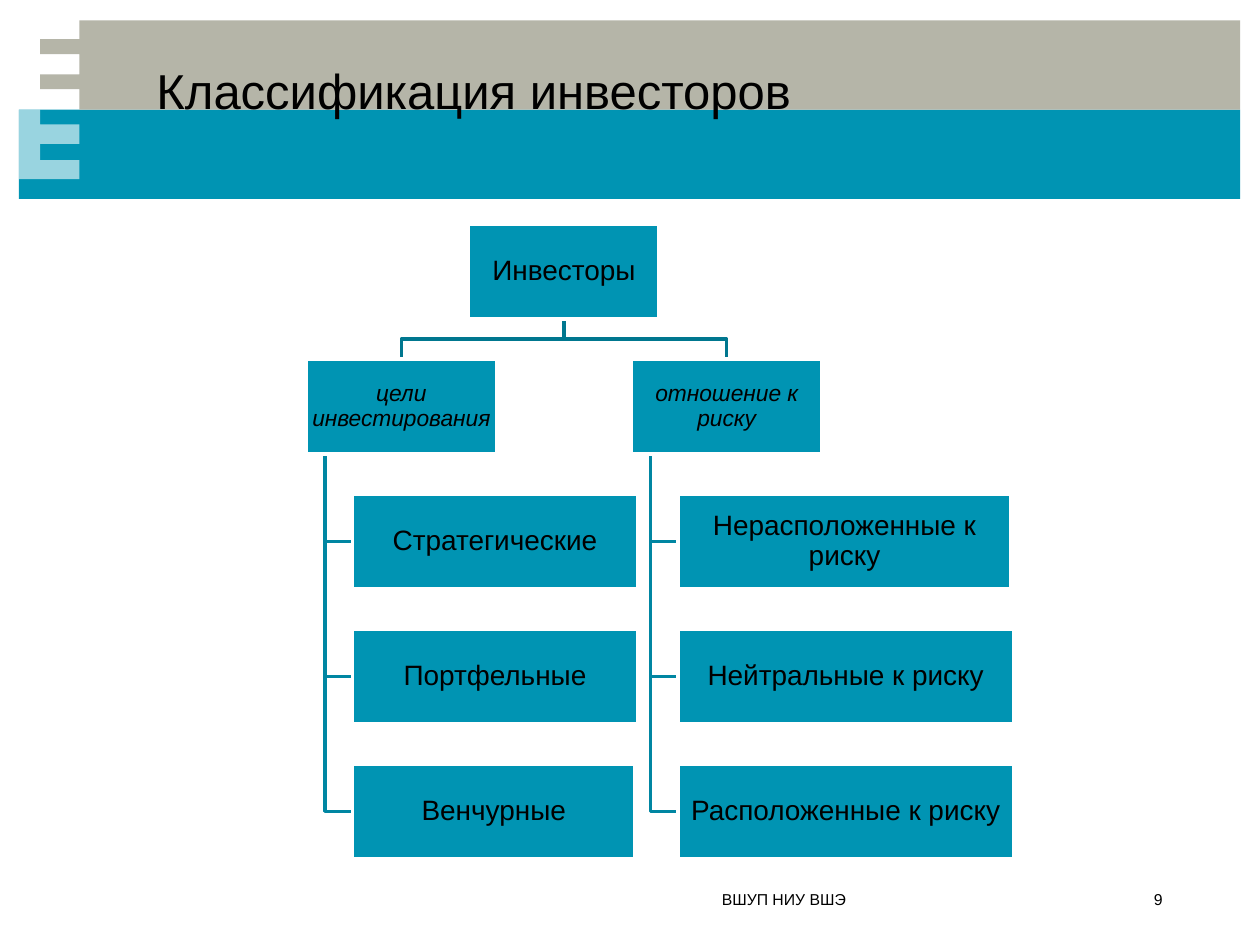
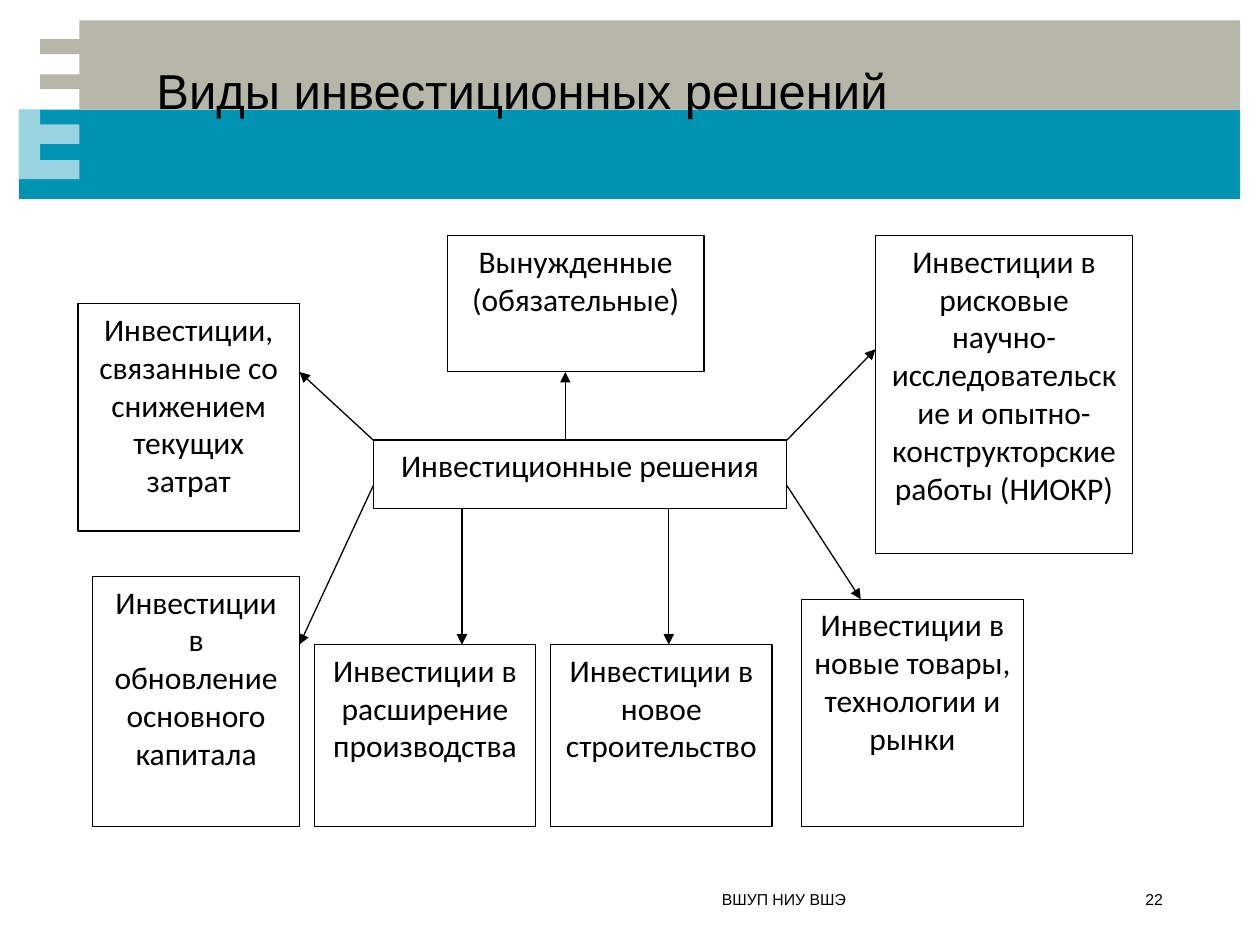
from dataclasses import dataclass
from itertools import pairwise

from lxml import etree
from pptx import Presentation
from pptx.dml.color import RGBColor
from pptx.enum.shapes import MSO_CONNECTOR as Connector, MSO_SHAPE as Preset
from pptx.enum.text import MSO_ANCHOR as Anchor, MSO_AUTO_SIZE as AutoSize, PP_ALIGN as Align
from pptx.oxml.ns import qn
from pptx.util import Cm, Pt


@dataclass(frozen=True)
class Theme:
    teal: str = "0094B3"
    stone: str = "B5B5A8"
    white: str = "FFFFFF"
    ink: str = "000000"
    root_line: str = "00778F"
    branch_line: str = "0086A2"
    font: str = "Arial"
    decision_font: str = "Calibri"
    title_size: float = 28
    decision_size: float = 18
    node_size: float = 16
    criterion_size: float = 13
    footer_size: float = 9
    thick: float = 2
    thin: float = 0.75


THEME = Theme()

# Content
FOOTER = "ВШУП НИУ ВШЭ"

INVESTORS = {
    "title": "Классификация инвесторов",
    "page": "9",
    "root": "Инвесторы",
    # criterion, left edge, [(class, width)], in cm
    "branches": [
        ("цели инвестирования", 6.17,
         [("Стратегические", 5.74), ("Портфельные", 5.74), ("Венчурные", 5.69)]),
        ("отношение к риску", 12.73,
         [("Нерасположенные к риску", 6.71), ("Нейтральные к риску", 6.76),
          ("Расположенные к риску", 6.76)]),
    ],
}

DECISIONS = {
    "title": "Виды инвестиционных решений",
    "page": "22",
    # text, (column, row, columns, rows) on the diagram grid
    "boxes": [
        ("Инвестиционные решения", (20, 9, 28, 3)),
        ("Вынужденные (обязательные)", (25, 0, 17.4, 6)),
        ("Инвестиции, связанные со снижением текущих затрат", (0, 3, 15, 10)),
        ("Инвестиции в обновление основного капитала", (1, 15, 14, 11)),
        ("Инвестиции в расширение производства", (16, 18, 15, 8)),
        ("Инвестиции в новое строительство", (32, 18, 15, 8)),
        ("Инвестиции в новые товары, технологии и рынки", (49, 16, 15, 10)),
        ("Инвестиции в рисковые научно-исследовательские и "
         "опытно-конструкторские работы (НИОКР)", (54, 0, 17.4, 14)),
    ],
    # (column, row) of the start and of the arrowhead
    "arrows": [
        ((33, 9), (33, 6)), ((20, 9), (15, 6)), ((20, 11), (15, 18)),
        ((26, 12), (26, 18)), ((40, 12), (40, 18)),
        ((48, 11), (53, 16)), ((48, 9), (54, 5)),
    ],
}

# Shared frame, in cm
BAND_LEFT, BAND_RIGHT = 0.38, 25
BAND_TOP, BAND_MIDDLE, BAND_BOTTOM = 0.41, 2.21, 4.01
COMB_TIP, COMB_SPINE = 0.81, 1.6
STONE_TEETH = [BAND_MIDDLE, 1.8, 1.5, 1.09, 0.79, BAND_TOP]
PALE_TEETH = [3.61, 3.23, 2.9, 2.51, BAND_MIDDLE]
TITLE_AREA = (2.9, 1.09, 20.8, 2.67)
FOOTER_AREA = (2.9, 17.93, 14.4, 0.38)
PAGE_AREA = (22.5, 17.93, 1.19, 0.38)

# Investor tree, in cm
TREE_TOP, LEVEL_STEP = 4.52, 2.72
NODE_WIDTH, NODE_HEIGHT = 3.84, 1.91
TRUNK_INDENT, CLASS_INDENT = 0.38, 0.94

# Decision grid, in cm
GRID_LEFT, GRID_TOP = 1.57, 4.75
COLUMN, ROW = 16.08 / 54, 11.91 / 26


def color(code):
    return RGBColor.from_string(code)


def cm(values):
    return [Cm(value) for value in values]


def write(frame, text, size, font=THEME.font, align=Align.CENTER, italic=False):
    frame.word_wrap = True
    paragraph = frame.paragraphs[0]
    paragraph.alignment = align
    run = paragraph.add_run()
    run.text = text
    run.font.name, run.font.size, run.font.italic = font, Pt(size), italic
    run.font.color.rgb = color(THEME.ink)
    return paragraph


def paint(shape, fill=None, line=None, width=THEME.thick):
    shape.shadow.inherit = False
    if fill:
        shape.fill.solid()
        shape.fill.fore_color.rgb = color(fill)
    else:
        shape.fill.background()
    if line:
        shape.line.color.rgb = color(line)
        shape.line.width = Pt(width)
    else:
        shape.line.fill.background()
    return shape


def rectangle(slide, area, **style):
    return paint(slide.shapes.add_shape(Preset.RECTANGLE, *cm(area)), **style)


def outline(slide, points, close, **style):
    start, *rest = [cm(point) for point in points]
    builder = slide.shapes.build_freeform(*start)
    builder.add_line_segments(rest, close=close)
    return paint(builder.convert_to_shape(), **style)


def comb(edges):
    """Zigzag upwards between the spine and the tips of the teeth."""
    return [(COMB_TIP if step % 2 else COMB_SPINE, y)
            for step, span in enumerate(pairwise(edges)) for y in span]


def add_bands(layout, slide):
    """Draw the header bands and hand them over to the shared layout."""
    teal = rectangle(slide, (BAND_LEFT, BAND_MIDDLE, BAND_RIGHT - BAND_LEFT,
                             BAND_BOTTOM - BAND_MIDDLE), fill=THEME.teal)
    stone = outline(slide, comb(STONE_TEETH) + [(BAND_RIGHT, BAND_TOP), (BAND_RIGHT, BAND_MIDDLE)],
                    True, fill=THEME.stone)
    pale = outline(slide, comb(PALE_TEETH) + [(BAND_LEFT, BAND_MIDDLE), (BAND_LEFT, PALE_TEETH[0])],
                   True, fill=THEME.white)
    white = pale.element.spPr.find(qn("a:solidFill"))[0]
    etree.SubElement(white, qn("a:alpha"), val="60000")
    for place, band in enumerate((teal, stone, pale), start=2):
        layout.shapes.element.insert(place, band.element)


def add_frame(slide, content):
    title = slide.shapes.title
    title.left, title.top, title.width, title.height = cm(TITLE_AREA)
    title.text_frame.auto_size = AutoSize.NONE
    title.text_frame.vertical_anchor = Anchor.TOP
    write(title.text_frame, content["title"], THEME.title_size, align=Align.LEFT)
    for area, text in ((FOOTER_AREA, FOOTER), (PAGE_AREA, content["page"])):
        frame = slide.shapes.add_textbox(*cm(area)).text_frame
        frame.vertical_anchor = Anchor.MIDDLE
        write(frame, text, THEME.footer_size, align=Align.RIGHT)


# Investor tree
def add_node(slide, text, left, level, width=NODE_WIDTH, size=THEME.node_size, italic=False):
    area = (left, TREE_TOP + level * LEVEL_STEP, width, NODE_HEIGHT)
    frame = rectangle(slide, area, fill=THEME.teal, line=THEME.white).text_frame
    frame.margin_left = frame.margin_top = frame.margin_right = frame.margin_bottom = Cm(0.03)
    frame.vertical_anchor = Anchor.MIDDLE
    write(frame, text, size, italic=italic).line_spacing = 0.9


def add_tree(slide, content):
    branches = content["branches"]
    root_left = sum(left for _, left, _ in branches) / len(branches)
    root_x = root_left + NODE_WIDTH / 2
    root_bottom = TREE_TOP + NODE_HEIGHT
    branch_top = TREE_TOP + LEVEL_STEP
    fork_y = (root_bottom + branch_top) / 2

    # Lines lie under the nodes
    for _, left, classes in branches:
        branch_x, trunk_x = left + NODE_WIDTH / 2, left + TRUNK_INDENT
        outline(slide, [(root_x, root_bottom), (root_x, fork_y),
                        (branch_x, fork_y), (branch_x, branch_top)],
                False, line=THEME.root_line)
        for level in range(2, 2 + len(classes)):
            class_y = TREE_TOP + level * LEVEL_STEP + NODE_HEIGHT / 2
            outline(slide, [(trunk_x, branch_top + NODE_HEIGHT), (trunk_x, class_y),
                            (left + CLASS_INDENT, class_y)],
                    False, line=THEME.branch_line)

    add_node(slide, content["root"], root_left, 0)
    for criterion, left, classes in branches:
        add_node(slide, criterion, left, 1, size=THEME.criterion_size, italic=True)
        for level, (name, width) in enumerate(classes, start=2):
            add_node(slide, name, left + CLASS_INDENT, level, width)


# Decision diagram
def on_grid(column, row):
    return GRID_LEFT + column * COLUMN, GRID_TOP + row * ROW


def add_arrow(slide, start, end):
    arrow = slide.shapes.add_connector(Connector.STRAIGHT, *cm(on_grid(*start)), *cm(on_grid(*end)))
    arrow.line.color.rgb = color(THEME.ink)
    arrow.line.width = Pt(THEME.thin)
    etree.SubElement(arrow.line._get_or_add_ln(), qn("a:tailEnd"), type="triangle")
    etree.SubElement(arrow.element.spPr, qn("a:effectLst"))


def add_decisions(slide, content):
    for text, (column, row, columns, rows) in content["boxes"]:
        area = (*on_grid(column, row), columns * COLUMN, rows * ROW)
        box = rectangle(slide, area, fill=THEME.white, line=THEME.ink, width=THEME.thin)
        box.text_frame.vertical_anchor = Anchor.TOP
        write(box.text_frame, text, THEME.decision_size, THEME.decision_font).space_after = Pt(10)
    for start, end in content["arrows"]:
        add_arrow(slide, start, end)


def main():
    deck = Presentation()
    deck.slide_width, deck.slide_height = Cm(25.4), Cm(19.05)
    layout = deck.slide_layouts[5]
    pages = [(INVESTORS, add_tree), (DECISIONS, add_decisions)]
    for content, add_diagram in pages:
        slide = deck.slides.add_slide(layout)
        if len(deck.slides) == 1:
            add_bands(layout, slide)
        add_frame(slide, content)
        add_diagram(slide, content)
    deck.save("out.pptx")


if __name__ == "__main__":
    main()
